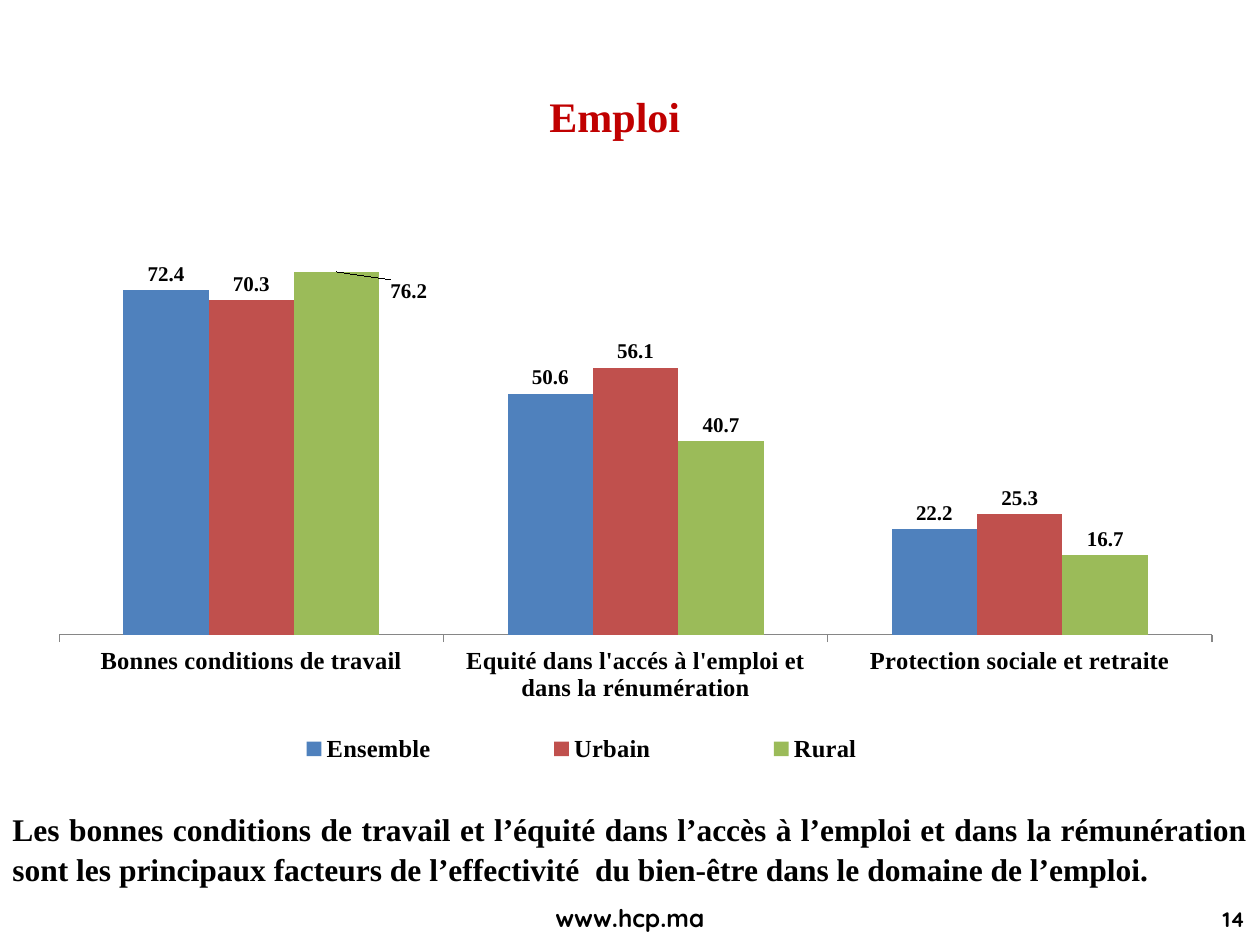
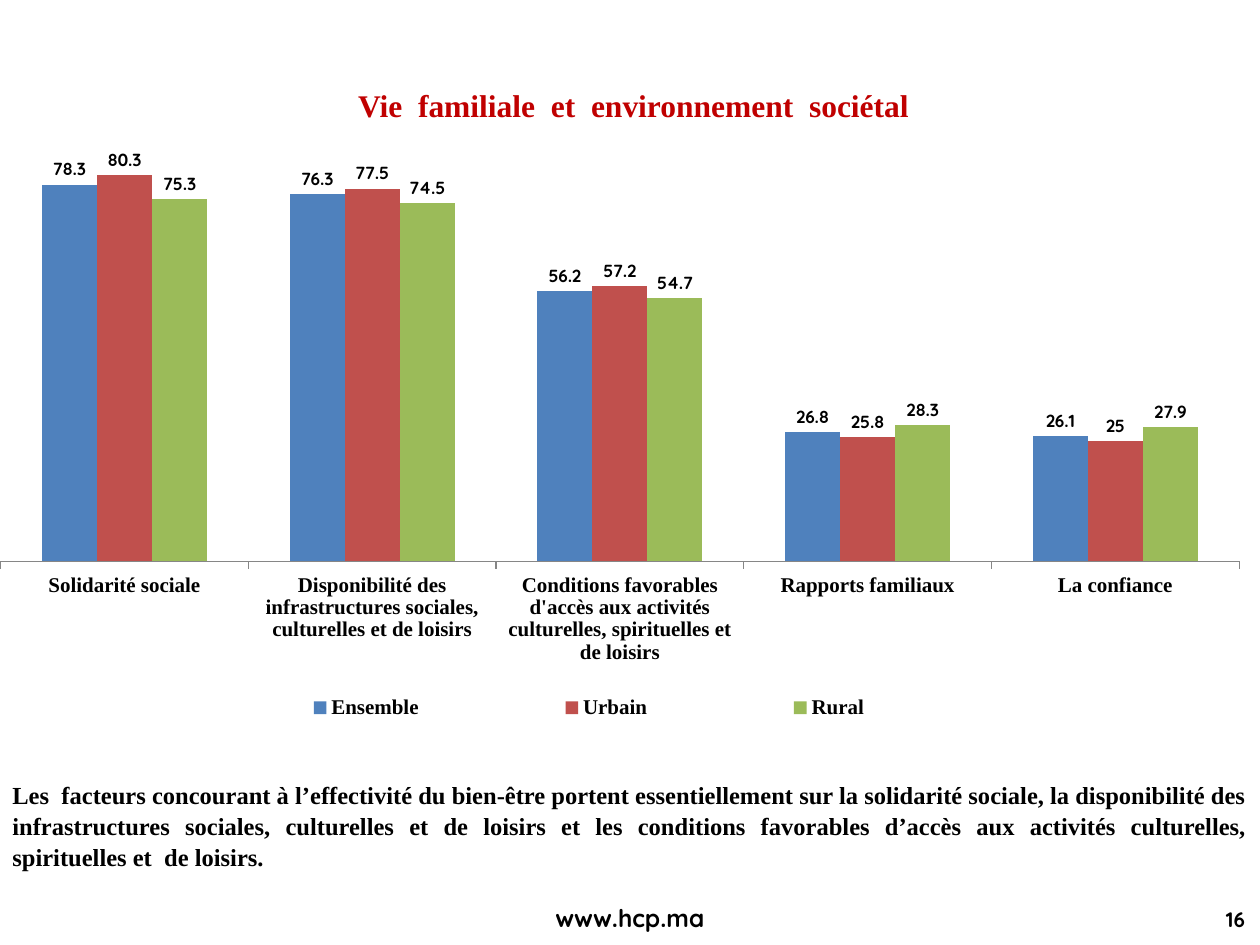
from lxml import etree
from pptx import Presentation
from pptx.chart.data import CategoryChartData
from pptx.dml.color import RGBColor
from pptx.enum.chart import XL_CHART_TYPE, XL_LABEL_POSITION, XL_LEGEND_POSITION, XL_TICK_LABEL_POSITION, XL_TICK_MARK
from pptx.enum.text import MSO_ANCHOR, MSO_AUTO_SIZE, PP_ALIGN
from pptx.oxml.ns import qn
from pptx.util import Inches, Pt

CLUSTERED = XL_CHART_TYPE.COLUMN_CLUSTERED
OUTSIDE_END = XL_LABEL_POSITION.OUTSIDE_END
BOTTOM = XL_LEGEND_POSITION.BOTTOM
LOW = XL_TICK_LABEL_POSITION.LOW
TICK_OUTSIDE = XL_TICK_MARK.OUTSIDE
MIDDLE = MSO_ANCHOR.MIDDLE
FIXED = MSO_AUTO_SIZE.NONE
CENTER, RIGHT, JUSTIFY = PP_ALIGN.CENTER, PP_ALIGN.RIGHT, PP_ALIGN.JUSTIFY

COLORS = {
    "title": "C00000",
    "text": "000000",
    "axis": "868686",
    "Ensemble": "4F81BD",
    "Urbain": "C0504D",
    "Rural": "9BBB59",
}
SERIF, SANS = "Times New Roman", "Quicksand"
FOOTER_AREA = (38.2, 94.93, 23.6, 4.4)
NUMBER_AREA = (84.6, 94.93, 15.2, 4.67)

PAGES = [
    {
        "number": "14",
        "title": "Emploi",
        "title_area": (3.5, 9.07, 90.6, 6.27),
        "title_size": 24,
        "message": "Les bonnes conditions de travail et l’équité dans l’accès à l’emploi et dans la rémunération "
                   "sont les principaux facteurs de l’effectivité  du bien-être dans le domaine de l’emploi. ",
        "message_area": (0, 86.4, 100, 6.67),
        "message_size": 18,
        "chart_area": (2.8, 20.67, 95.3, 62),
        "plot": {"x": 0.02, "y": 0.1, "w": 0.96, "h": 0.65},
        "legend": {"x": 0.13, "y": 0.9, "w": 0.65, "h": 0.09},
        "axis_size": 14,
        "axis_top": 80,
        "label_font": (12, SERIF),
        "label_format": "0.0",
        "moved_label": {"x": 0.06, "y": 0.06},
        "categories": [
            "Bonnes conditions de travail",
            "Equité dans l'accés à l'emploi et dans la rénumération",
            "Protection sociale et retraite",
        ],
        "values": {
            "Ensemble": (72.4, 50.6, 22.2),
            "Urbain": (70.3, 56.1, 25.3),
            "Rural": (76.2, 40.7, 16.7),
        },
    },
    {
        "number": "16",
        "title": "Vie  familiale  et  environnement  sociétal ",
        "title_area": (1.2, 9.33, 98.8, 3.47),
        "title_size": 18,
        "message": "Les  facteurs concourant à l’effectivité du bien-être portent essentiellement sur la solidarité "
                   "sociale, la disponibilité des infrastructures sociales, culturelles et de loisirs et les "
                   "conditions favorables d’accès aux activités culturelles, spirituelles et  de loisirs.",
        "message_area": (0, 81.87, 100, 10.8),
        "message_size": 14,
        "chart_area": (0, 13.6, 98.4, 64.53),
        "plot": {"x": 0, "y": 0, "w": 1, "h": 0.71},
        "legend": {"x": 0.14, "y": 0.91, "w": 0.67, "h": 0.08},
        "axis_size": 12,
        "axis_top": 90,
        "label_font": (10, SANS),
        "label_format": "General",
        "moved_label": None,
        "categories": [
            "Solidarité sociale",
            "Disponibilité des infrastructures sociales, culturelles et de loisirs",
            "Conditions favorables d'accès aux activités culturelles, spirituelles et de loisirs",
            "Rapports familiaux",
            "La confiance",
        ],
        "values": {
            "Ensemble": (78.3, 76.3, 56.2, 26.8, 26.1),
            "Urbain": (80.3, 77.5, 57.2, 25.8, 25),
            "Rural": (75.3, 74.5, 54.7, 28.3, 27.9),
        },
    },
]

deck = Presentation()
deck.slide_width, deck.slide_height = Inches(10), Inches(7.5)


def percent_area(left, top, width, height):
    return [
        int(deck.slide_width * left / 100),
        int(deck.slide_height * top / 100),
        int(deck.slide_width * width / 100),
        int(deck.slide_height * height / 100),
    ]


def set_layout(parent, index, settings):
    for old_layout in parent.findall(qn("c:layout")):
        parent.remove(old_layout)
    layout = etree.Element(qn("c:layout"))
    manual = etree.SubElement(layout, qn("c:manualLayout"))
    for tag, value in settings.items():
        etree.SubElement(manual, qn(f"c:{tag}")).set("val", str(value))
    parent.insert(index, layout)


for content in PAGES:
    page = deck.slides.add_slide(deck.slide_layouts[5])

    title = page.shapes.title
    title.left, title.top, title.width, title.height = percent_area(*content["title_area"])
    footer, number, message = [
        page.shapes.add_textbox(*percent_area(*area))
        for area in (FOOTER_AREA, NUMBER_AREA, content["message_area"])
    ]
    for box, text, size, name, color, alignment in (
        (title, content["title"], content["title_size"], SERIF, "title", CENTER),
        (footer, "www.hcp.ma", 14, SANS, "text", CENTER),
        (number, content["number"], 12, SANS, "text", RIGHT),
        (message, content["message"], content["message_size"], SERIF, "text", JUSTIFY),
    ):
        frame = box.text_frame
        frame.text = text
        frame.word_wrap = True
        frame.auto_size = FIXED
        frame.vertical_anchor = MIDDLE
        para = frame.paragraphs[0]
        para.alignment = alignment
        font = para.runs[0].font
        font.size, font.name, font.bold = Pt(size), name, True
        font.color.rgb = RGBColor.from_string(COLORS[color])
    message.text_frame.paragraphs[0].line_spacing = 1.05

    data = CategoryChartData()
    data.categories = content["categories"]
    for name, values in content["values"].items():
        data.add_series(name, values)
    chart = page.shapes.add_chart(CLUSTERED, *percent_area(*content["chart_area"]), data).chart
    chart.has_title = False
    chart.has_legend = True
    chart.legend.position = BOTTOM
    chart.legend.include_in_layout = False
    chart.font.size, chart.font.name = Pt(10), SANS
    chart.font.color.rgb = RGBColor.from_string(COLORS["text"])

    value_axis, category_axis = chart.value_axis, chart.category_axis
    value_axis.minimum_scale, value_axis.maximum_scale = 0, content["axis_top"]
    value_axis.has_major_gridlines = False
    value_axis.visible = False
    category_axis.major_tick_mark = TICK_OUTSIDE
    category_axis.tick_label_position = LOW
    category_axis.format.line.width = Pt(0.75)
    category_axis.format.line.color.rgb = RGBColor.from_string(COLORS["axis"])

    plot = chart.plots[0]
    plot.vary_by_categories = False
    plot.gap_width, plot.overlap = 150, 0
    label_size, label_name = content["label_font"]
    styled_fonts = [(part.font, content["axis_size"], SERIF)
                    for part in (category_axis.tick_labels, chart.legend)]
    for series in plot.series:
        series.format.fill.solid()
        series.format.fill.fore_color.rgb = RGBColor.from_string(COLORS[series.name])
        labels = series.data_labels
        labels.show_value = True
        labels.position = OUTSIDE_END
        labels.number_format = content["label_format"]
        labels.number_format_is_linked = False
        styled_fonts.append((labels.font, label_size, label_name))

    if content["moved_label"]:
        rural = plot.series[2]
        label = rural.points[0].data_label
        label.position = OUTSIDE_END
        styled_fonts.append((label.font, label_size, label_name))
        set_layout(rural.data_labels._element.find(qn("c:dLbl")), 1, content["moved_label"])

    for font, size, name in styled_fonts:
        font.size, font.name, font.bold = Pt(size), name, True
        font.color.rgb = RGBColor.from_string(COLORS["text"])

    edges = {"xMode": "edge", "yMode": "edge"}
    plot_area = chart._chartSpace.find(".//" + qn("c:plotArea"))
    set_layout(plot_area, 0, {"layoutTarget": "inner", **edges, **content["plot"]})
    set_layout(chart.legend._element, 1, {**edges, **content["legend"]})

deck.save("out.pptx")
